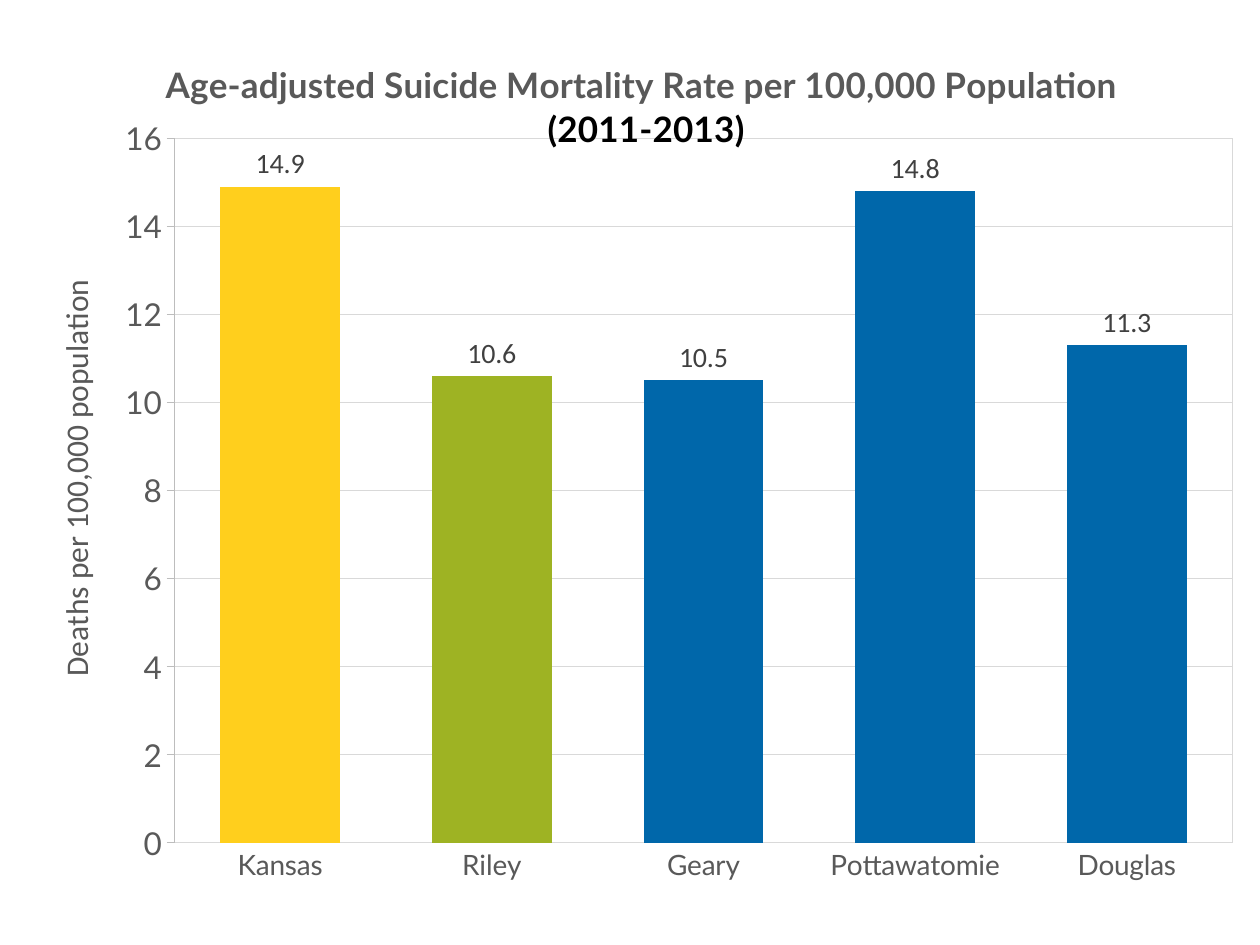
from lxml import etree
from pptx import Presentation
from pptx.chart.data import CategoryChartData
from pptx.dml.color import RGBColor
from pptx.enum.chart import XL_CHART_TYPE, XL_LABEL_POSITION, XL_TICK_MARK
from pptx.oxml import parse_xml
from pptx.oxml.ns import nsdecls, qn
from pptx.util import Pt

COLUMN = XL_CHART_TYPE.COLUMN_CLUSTERED
OUT_END = XL_LABEL_POSITION.OUTSIDE_END
NO_TICK, OUT_TICK = XL_TICK_MARK.NONE, XL_TICK_MARK.OUTSIDE

BLACK = RGBColor(0x00, 0x00, 0x00)
DARK = RGBColor(0x40, 0x40, 0x40)
GREY = RGBColor(0x59, 0x59, 0x59)
SILVER = RGBColor(0xBD, 0xBD, 0xBD)
PALE = RGBColor(0xD9, 0xD9, 0xD9)
GOLD = RGBColor(0xFF, 0xCF, 0x1D)
GREEN = RGBColor(0x9E, 0xB3, 0x23)
BLUE = RGBColor(0x00, 0x67, 0xAA)

RATES = [
    ("Kansas", 14.9, GOLD),
    ("Riley", 10.6, GREEN),
    ("Geary", 10.5, BLUE),
    ("Pottawatomie", 14.8, BLUE),
    ("Douglas", 11.3, BLUE),
]


class Deck:
    body, head = "Calibri", "Lato"

    def __init__(self, wide, high):
        self.prs = Presentation()
        self.prs.slide_width, self.prs.slide_height = Pt(wide), Pt(high)
        self.slide = self.prs.slides.add_slide(self.prs.slide_layouts[6])

    def font(self, font, name, size, color, bold=False):
        font.name, font.size, font.bold = name, Pt(size), bold
        font.color.rgb = color

    def line(self, line, color):
        line.color.rgb = color
        line.width = Pt(0.75)

    def place(self, part, **spots):
        """Fix a chart part by fractions of the chart area."""
        for old in part.findall(qn("c:layout")):
            part.remove(old)
        layout = parse_xml(f"<c:layout {nsdecls('c')}><c:manualLayout/></c:layout>")
        for tag, val in spots.items():
            etree.SubElement(layout[0], qn(f"c:{tag}")).set("val", str(val))
        text = part.find(qn("c:tx"))
        part.insert(0 if text is None else 1, layout)

    def title(self, title, lines, name, size, bold, x, y):
        frame = title.text_frame
        frame.text = "\n".join(text for text, _ in lines)
        for para, (_, color) in zip(frame.paragraphs, lines):
            self.font(para.runs[0].font, name, size, color, bold)
        self.place(title._element, xMode="edge", yMode="edge", x=x, y=y)

    def axis(self, axis, size, color, tick):
        self.font(axis.tick_labels.font, self.head, size, GREY)
        self.line(axis.format.line, color)
        axis.major_tick_mark, axis.minor_tick_mark = tick, NO_TICK

    def chart(self, left, top, wide, high, rows):
        data = CategoryChartData()
        data.categories = [row[0] for row in rows]
        data.add_series("Series 1", [row[1] for row in rows])
        chart = self.slide.shapes.add_chart(
            COLUMN, Pt(left), Pt(top), Pt(wide), Pt(high), data).chart
        self.font(chart.font, self.body, 10, BLACK)
        chart.has_legend = False

        # Columns and their values
        plot = chart.plots[0]
        plot.gap_width, plot.vary_by_categories = 77, False
        for i, row in enumerate(rows):
            fill = plot.series[0].points[i].format.fill
            fill.solid()
            fill.fore_color.rgb = row[2]
        plot.has_data_labels = True
        labels = plot.data_labels
        labels.show_value, labels.position = True, OUT_END
        self.font(labels.font, self.body, 16, DARK)
        return chart

    def frame(self, chart, x, y, w, h):
        area = chart._chartSpace.chart.plotArea
        self.place(area, layoutTarget="inner", xMode="edge", yMode="edge",
                   x=x, y=y, w=w, h=h)
        area.append(parse_xml(
            f'<c:spPr {nsdecls("c", "a")}><a:noFill/><a:ln w="{Pt(0.75)}">'
            f'<a:solidFill><a:srgbClr val="{PALE}"/></a:solidFill></a:ln></c:spPr>'))


def main():
    deck = Deck(720, 540)
    chart = deck.chart(6, 12, 720, 516, RATES)

    # Axes
    deck.axis(chart.category_axis, 16, PALE, NO_TICK)
    rate = chart.value_axis
    deck.axis(rate, 18, SILVER, OUT_TICK)
    rate.minimum_scale, rate.maximum_scale, rate.major_unit = 0, 16, 2
    rate.tick_labels.number_format = "#,##0"
    rate.tick_labels.number_format_is_linked = False
    deck.line(rate.major_gridlines.format.line, PALE)

    # Titles
    deck.title(rate.axis_title, [("Deaths per 100,000 population", GREY)],
               deck.body, 18, False, 0.03, 0.28)
    deck.title(chart.chart_title,
               [("Age-adjusted Suicide Mortality Rate per 100,000 Population ", GREY),
                ("(2011-2013)", BLACK)],
               deck.head, 20, True, 0.12, 0.04)

    # Plot area
    deck.frame(chart, 0.13, 0.13, 0.84, 0.78)
    deck.prs.save("out.pptx")


if __name__ == "__main__":
    main()
